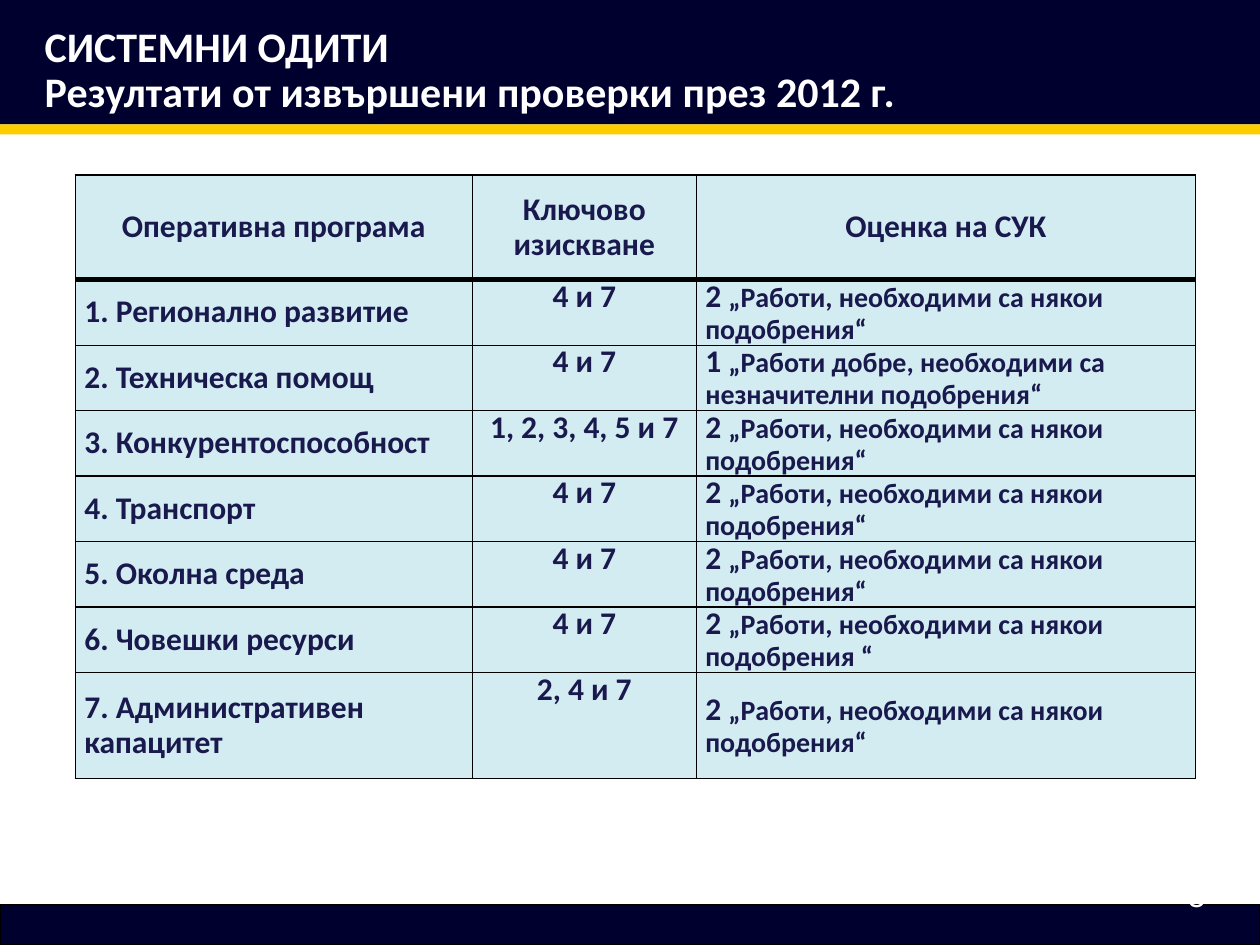
from lxml import etree
from pptx import Presentation
from pptx.dml.color import RGBColor
from pptx.enum import shapes, text
from pptx.oxml import ns
from pptx.util import Cm, Pt

NAVY = RGBColor(0x00, 0x00, 0x2E)
GOLD = RGBColor(0xFF, 0xCC, 0x00)
BLACK = RGBColor(0x00, 0x00, 0x00)
WHITE = RGBColor(0xFF, 0xFF, 0xFF)
INK = RGBColor(0x19, 0x19, 0x4D)
PALE_BLUE = RGBColor(0xD3, 0xEC, 0xF2)

IMPROVE = "„Работи, необходими са някои подобрения“"
HEADINGS = ["Оперативна програма", "Ключово изискване", "Оценка на СУК"]
PROGRAMMES = [
    ("1. Регионално развитие", "4 и 7", "2 ", IMPROVE),
    ("2. Техническа помощ", "4 и 7", "1 ",
     "„Работи добре, необходими са незначителни подобрения“"),
    ("3. Конкурентоспособност", "1, 2, 3, 4, 5 и 7", "2 ", IMPROVE),
    ("4. Транспорт", "4 и 7", "2 ", IMPROVE),
    ("5. Околна среда", "4 и 7", "2 ", IMPROVE),
    ("6. Човешки ресурси", "4 и 7", "2 ", "„Работи, необходими са някои подобрения “"),
    ("7. Административен капацитет", "2, 4 и 7", "2 ", IMPROVE),
]


def set_font(span, size, colour, name="Calibri", bold=True):
    span.font.name = name
    span.font.size = Pt(size)
    span.font.bold = bold
    span.font.color.rgb = colour


def add_borders(cell, widths):
    """Draw the cell's borders; widths maps L, R, T, B (in that order) to points."""
    properties = cell._tc.get_or_add_tcPr()
    for side, width in widths.items():
        line = etree.SubElement(properties, ns.qn(f"a:ln{side}"), w=str(Pt(width)))
        fill = etree.SubElement(line, ns.qn("a:solidFill"))
        etree.SubElement(fill, ns.qn("a:srgbClr"), val=str(BLACK))


deck = Presentation()
deck.slide_width, deck.slide_height = Cm(25.4), Cm(19.05)
page = deck.slides.add_slide(deck.slide_layouts[5])

# Header and footer bands
for top, height, colour in [(0, 2.51, NAVY), (2.51, 0.2, GOLD), (18.24, 0.81, NAVY)]:
    band = page.shapes.add_shape(
        shapes.MSO_SHAPE.RECTANGLE, 0, Cm(top), deck.slide_width, Cm(height))
    band.shadow.inherit = False
    band.fill.solid()
    band.fill.fore_color.rgb = colour
    band.line.fill.background()
band.line.color.rgb = BLACK
band.line.width = Pt(0.75)

# Title, moved in front of the header band
title = page.shapes.title
page.shapes._spTree.append(title._element)
title.left, title.top, title.width, title.height = Cm(0.9), Cm(0.53), Cm(18.4), Cm(1.85)
frame = title.text_frame
frame.text = "СИСТЕМНИ ОДИТИ\nРезултати от извършени проверки през 2012 г."
frame.auto_size = text.MSO_AUTO_SIZE.NONE
frame.vertical_anchor = text.MSO_ANCHOR.TOP
frame.margin_left = frame.margin_right = frame.margin_top = frame.margin_bottom = 0
for para in frame.paragraphs:
    para.alignment = text.PP_ALIGN.LEFT
    para.line_spacing = 0.9
    set_font(para.runs[0], 24, WHITE)

# Table of audit results
column_widths = [8, 4.52, 10.06]
row_heights = [2.11] + [1.3] * 6 + [2.13]
table = page.shapes.add_table(
    len(row_heights), len(column_widths), Cm(1.52), Cm(3.53),
    Cm(sum(column_widths)), Cm(sum(row_heights))).table
table.horz_banding = False
for column, width in zip(table.columns, column_widths):
    column.width = Cm(width)
for row, height in zip(table.rows, row_heights):
    row.height = Cm(height)

rows = [[[heading] for heading in HEADINGS]]
rows += [[[name], [requirement], [mark, verdict]]
         for name, requirement, mark, verdict in PROGRAMMES]
for row_index, row in enumerate(rows):
    for column_index, parts in enumerate(row):
        cell = table.cell(row_index, column_index)
        is_heading = row_index == 0
        is_requirement = column_index == 1
        add_borders(cell, {"L": 1, "R": 1, "T": 3 if row_index == 1 else 1,
                           "B": 3 if is_heading else 1})
        cell.fill.solid()
        cell.fill.fore_color.rgb = PALE_BLUE
        cell.margin_left = cell.margin_right = Cm(0.18)
        cell.margin_top = cell.margin_bottom = 0
        if is_heading or not is_requirement:
            cell.vertical_anchor = text.MSO_ANCHOR.MIDDLE
        para = cell.text_frame.paragraphs[0]
        para.line_spacing = 0.9
        if is_heading or is_requirement:
            para.alignment = text.PP_ALIGN.CENTER
        for part, size in zip(parts, (18, 16)):
            span = para.add_run()
            span.text = part
            set_font(span, size, INK)

# Page number
number = page.shapes.add_textbox(Cm(23.7), Cm(17.53), Cm(0.86), Cm(1.02))
number.text_frame.text = "5"
number.text_frame.word_wrap = False
set_font(number.text_frame.paragraphs[0].runs[0], 18, WHITE, "Arial", False)

deck.save("out.pptx")
